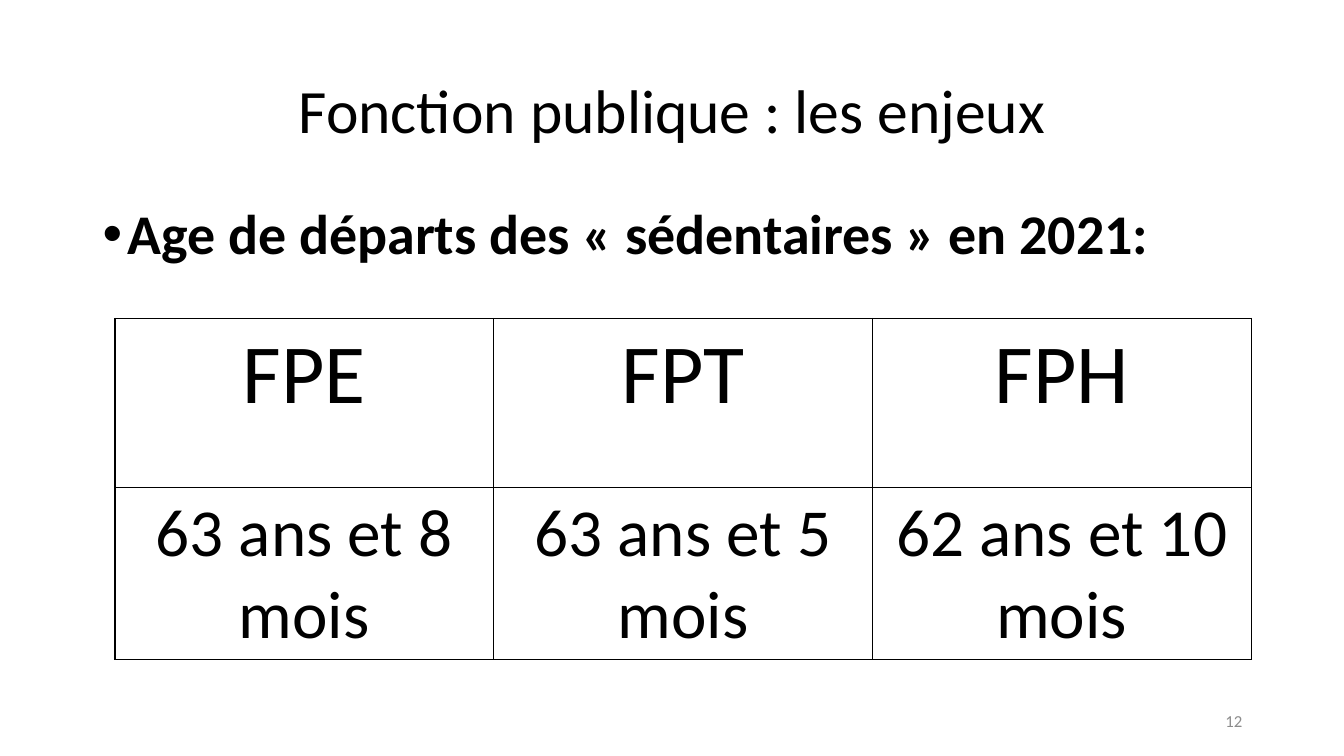
"""Build the slide on retirement ages in the French public service."""
from lxml.etree import SubElement
from pptx import Presentation
from pptx.dml.color import RGBColor
from pptx.enum.text import MSO_ANCHOR as Anchor, PP_ALIGN as Align
from pptx.oxml.ns import qn
from pptx.util import Inches, Pt

BLACK = RGBColor(0, 0, 0)
WHITE = RGBColor(255, 255, 255)
GREY = RGBColor(0x8C, 0x8C, 0x8C)
FONT = "Calibri"
AGES = [
    ("FPE", "63 ans et 8 mois"),
    ("FPT", "63 ans et 5 mois"),
    ("FPH", "62 ans et 10 mois"),
]


def write(frame, wording, size, align, color=BLACK, bold=False):
    frame.word_wrap = True
    paragraph = frame.paragraphs[0]
    paragraph.alignment = align
    run = paragraph.add_run()
    run.text = wording
    font = run.font
    font.name, font.size, font.bold = FONT, Pt(size), bold
    font.color.rgb = color
    return paragraph


def add_title(slide, wording):
    title = slide.shapes.title
    title.left, title.top = Inches(0.92), Inches(0.4)
    title.width, title.height = Inches(11.5), Inches(1.45)
    title.text_frame.vertical_anchor = Anchor.MIDDLE
    write(title.text_frame, wording, 44, Align.CENTER).line_spacing = 0.9


def add_bullet(slide, wording):
    body = slide.shapes.add_textbox(Inches(0.92), Inches(2), Inches(11.5), Inches(4.76))
    bullet = write(body.text_frame, wording, 40, Align.LEFT, bold=True)
    bullet.line_spacing = 0.9
    bullet.space_before = Pt(10)
    properties = bullet._p.get_or_add_pPr()
    properties.set("marL", str(Inches(0.25)))
    properties.set("indent", str(Inches(-0.25)))
    SubElement(properties, qn("a:buFont"), typeface="Arial")
    SubElement(properties, qn("a:buChar"), char="•")


def add_borders(cell):
    properties = cell._tc.get_or_add_tcPr()
    for position, side in enumerate(("a:lnL", "a:lnR", "a:lnT", "a:lnB")):
        border = SubElement(properties, qn(side), w=str(Pt(1)))
        fill = SubElement(border, qn("a:solidFill"))
        SubElement(fill, qn("a:srgbClr"), val=str(BLACK))
        properties.insert(position, border)


def add_ages_table(slide, ages):
    frame = slide.shapes.add_table(
        2, len(ages), Inches(1.14), Inches(3.16), Inches(11.27), Inches(3.36))
    table = frame.table
    table.first_row = table.horz_banding = False
    for column, entries in enumerate(ages):
        for row, (wording, size) in enumerate(zip(entries, (60, 48))):
            cell = table.cell(row, column)
            cell.fill.solid()
            cell.fill.fore_color.rgb = WHITE
            write(cell.text_frame, wording, size, Align.CENTER)
            add_borders(cell)


def add_page_number(slide, number):
    page = slide.shapes.add_textbox(Inches(9.42), Inches(6.95), Inches(3), Inches(0.4))
    page.text_frame.vertical_anchor = Anchor.MIDDLE
    write(page.text_frame, number, 12, Align.RIGHT, GREY)


def main():
    deck = Presentation()
    deck.slide_width, deck.slide_height = Inches(13.33), Inches(7.5)
    slide = deck.slides.add_slide(deck.slide_layouts[5])
    add_title(slide, "Fonction publique : les enjeux")
    add_bullet(slide, "Age de départs des « sédentaires » en 2021:")
    add_ages_table(slide, AGES)
    add_page_number(slide, "12")
    deck.save("out.pptx")


if __name__ == "__main__":
    main()
